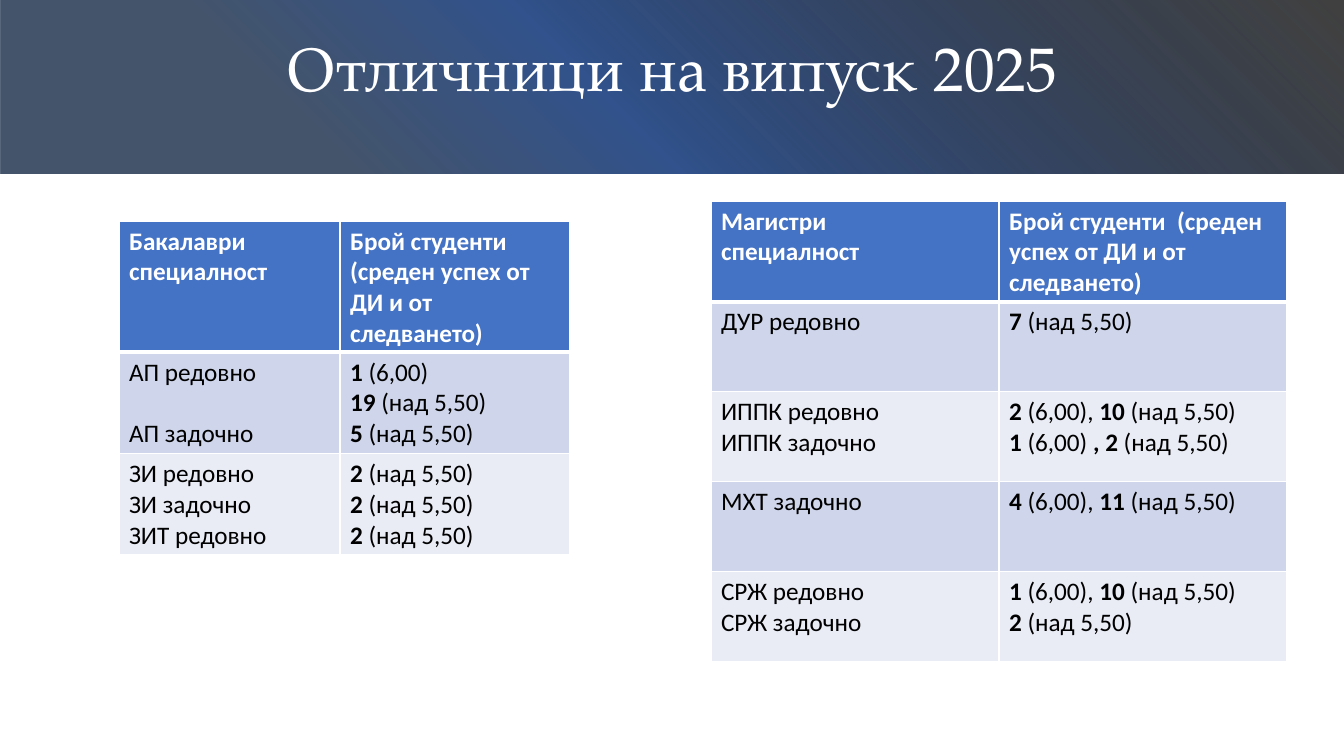
from lxml import etree
from pptx import Presentation
from pptx.dml.color import RGBColor
from pptx.enum.shapes import MSO_SHAPE
from pptx.enum.text import MSO_ANCHOR, MSO_AUTO_SIZE, PP_ALIGN
from pptx.oxml import parse_xml
from pptx.oxml.ns import nsdecls, qn
from pptx.util import Emu, Pt

RECTANGLE = MSO_SHAPE.RECTANGLE
CENTER, LEFT = PP_ALIGN.CENTER, PP_ALIGN.LEFT
MIDDLE = MSO_ANCHOR.MIDDLE
GROW = MSO_AUTO_SIZE.SHAPE_TO_FIT_TEXT

WHITE = RGBColor(0xFF, 0xFF, 0xFF)
BLACK = RGBColor(0x00, 0x00, 0x00)
HEADER_BLUE = RGBColor(0x44, 0x72, 0xC4)
BAND_DARK = RGBColor(0xCF, 0xD5, 0xEA)
BAND_LIGHT = RGBColor(0xE9, 0xEB, 0xF5)
SLATE = RGBColor(0x44, 0x54, 0x6A)
DEEP_BLUE = RGBColor(0x31, 0x52, 0x8C)

# position %, colour, opacity %
BANNER_STOPS = [(23, SLATE, 100), (45, DEEP_BLUE, 100), (99, BLACK, 74)]
SLIDE_W, SLIDE_H, BANNER_H = 1344, 756, 174
LINE_GAP = 22  # points, one line of table text

COUNT_HEADING = "Брой студенти  (среден успех от ДИ и от следването)"
# Each cell is a list of lines; text between asterisks is bold.
MASTERS = [
    (["Магистри", "специалност"], [COUNT_HEADING]),
    (["ДУР редовно"], ["*7 *(над 5,50)"]),
    (["ИППК редовно", "ИППК задочно"],
     ["*2 *(6,00), *10* (над 5,50)", "*1 *(6,00) *, 2* (над 5,50)"]),
    (["МХТ задочно"], ["*4 *(6,00), *11* (над 5,50)"]),
    (["СРЖ редовно", "СРЖ задочно"],
     ["*1 *(6,00), *10* (над 5,50)", "*2* (над 5,50)"]),
]
BACHELORS = [
    (["Бакалаври специалност"], [COUNT_HEADING]),
    (["АП редовно", "АП задочно"],
     ["*1 *(6,00)", "*19* (над 5,50)", "*5* (над 5,50)"]),
    (["ЗИ редовно", "ЗИ задочно", "ЗИТ редовно"], ["*2* (над 5,50)"] * 3),
]


def px(length):
    return Emu(round(length * 914400 / 100.8))


def write_text(frame, lines, *, size, font, color, bold=False, align=LEFT, gap=0):
    """Fill a text frame, with gap points before each line after the first."""
    for number, line in enumerate(lines):
        paragraph = frame.add_paragraph() if number else frame.paragraphs[0]
        paragraph.alignment = align
        if number and gap:
            paragraph.space_before = Pt(gap)
        for part, words in enumerate(line.split("*")):
            if words:
                run = paragraph.add_run()
                run.text = words
                run.font.size = Pt(size)
                run.font.name = font
                run.font.color.rgb = color
                run.font.bold = bold or part % 2 == 1


def add_banner(slide):
    """Draw the gradient strip as an upright rectangle turned by 90 degrees."""
    banner = slide.shapes.add_shape(
        RECTANGLE, px((SLIDE_W - BANNER_H) / 2), px((BANNER_H - SLIDE_W) / 2),
        px(BANNER_H), px(SLIDE_W))
    banner.rotation = 90
    banner.shadow.inherit = False
    banner.line.fill.background()
    stops = "".join(
        f'<a:gs pos="{place * 1000}"><a:srgbClr val="{color}">'
        f'<a:alpha val="{opacity * 1000}"/></a:srgbClr></a:gs>'
        for place, color, opacity in BANNER_STOPS)
    gradient = parse_xml(
        f'<a:gradFill {nsdecls("a")} rotWithShape="1"><a:gsLst>{stops}</a:gsLst>'
        f'<a:lin ang="{225 * 60000}" scaled="0"/></a:gradFill>')
    banner.element.spPr.find(qn("a:prstGeom")).addnext(gradient)
    slide.shapes.element.insert(2, banner.element)  # behind the title


def add_title(slide, text):
    title = slide.shapes.title
    title.left, title.top, title.width, title.height = map(px, (69, 24, 1206, 85))
    frame = title.text_frame
    frame.word_wrap = True
    frame.auto_size = GROW
    frame.vertical_anchor = MIDDLE
    write_text(frame, [text], size=44, font="TeX Gyre Pagella", color=WHITE,
               align=CENTER)


def set_borders(cell, row):
    properties = cell._tc.get_or_add_tcPr()
    widths = {"lnL": 1, "lnR": 1, "lnT": 3 if row == 1 else 1,
              "lnB": 3 if row == 0 else 1}
    for side, width in widths.items():
        line = etree.SubElement(properties, qn(f"a:{side}"), w=str(Pt(width)))
        fill = etree.SubElement(line, qn("a:solidFill"))
        etree.SubElement(fill, qn("a:srgbClr"), val=str(WHITE))


def add_honours_table(slide, rows, left, top, column_widths, row_heights, gap_row=None):
    """Add a banded table; gap_row leaves a line between its specialties."""
    table = slide.shapes.add_table(
        len(rows), len(column_widths), px(left), px(top),
        px(sum(column_widths)), px(sum(row_heights))).table
    for column, width in zip(table.columns, column_widths):
        column.width = px(width)
    for number, (contents, height) in enumerate(zip(rows, row_heights)):
        table.rows[number].height = px(height)
        is_header = number == 0
        band = BAND_DARK if number % 2 else BAND_LIGHT
        for column, lines in enumerate(contents):
            cell = table.cell(number, column)
            set_borders(cell, number)
            cell.fill.solid()
            cell.fill.fore_color.rgb = HEADER_BLUE if is_header else band
            has_gap = number == gap_row and column == 0
            write_text(cell.text_frame, lines, size=18, font="Calibri",
                       color=WHITE if is_header else BLACK, bold=is_header,
                       gap=LINE_GAP if has_gap else 0)


def main():
    deck = Presentation()
    deck.slide_width, deck.slide_height = px(SLIDE_W), px(SLIDE_H)
    slide = deck.slides.add_slide(deck.slide_layouts[5])
    add_banner(slide)
    add_title(slide, "Отличници на випуск 2025")
    add_honours_table(slide, MASTERS, 711, 201, [288, 288], [100] + [90] * 4)
    add_honours_table(slide, BACHELORS, 119, 221, [221, 230], [130, 101, 101],
                      gap_row=1)
    deck.save("out.pptx")


if __name__ == "__main__":
    main()
